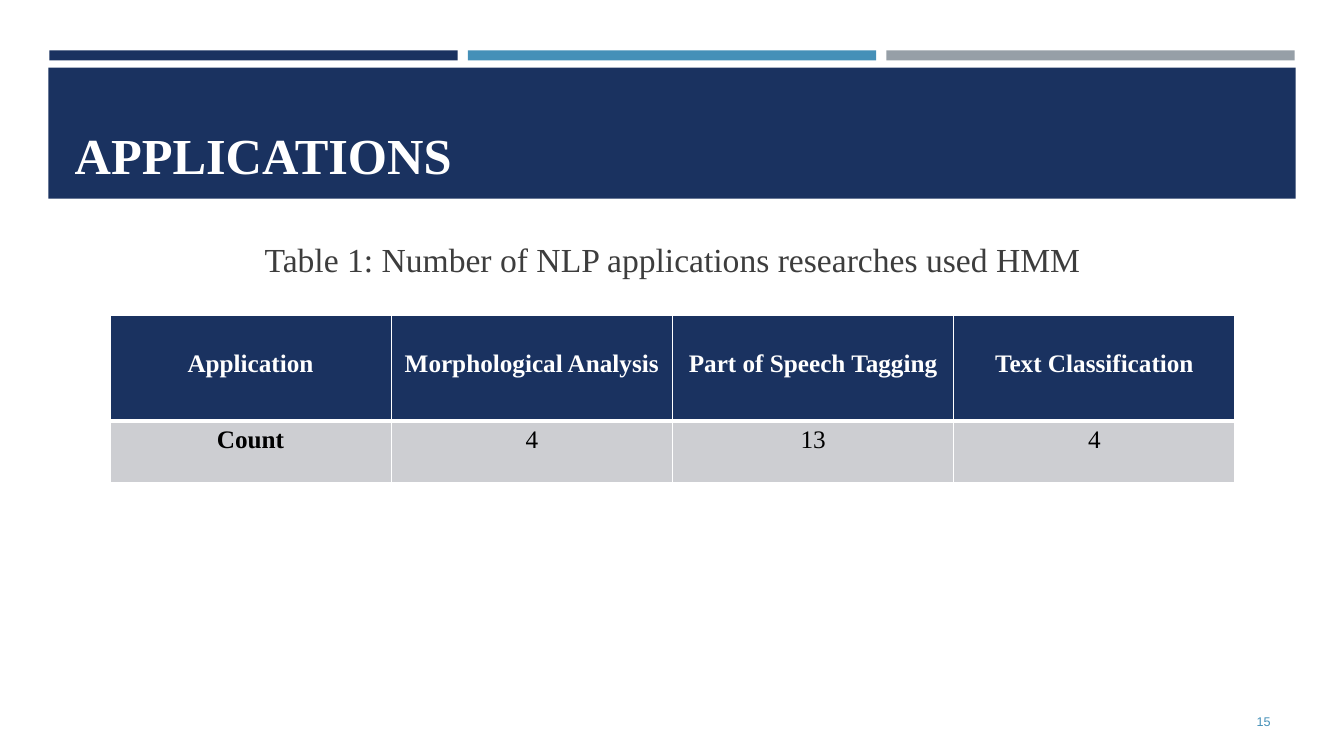
from lxml import etree
from pptx import Presentation
from pptx.dml.color import RGBColor
from pptx.enum.shapes import MSO_SHAPE
from pptx.enum.text import MSO_ANCHOR, PP_ALIGN
from pptx.oxml.ns import qn
from pptx.util import Inches, Pt

RECTANGLE = MSO_SHAPE.RECTANGLE
TOP, MIDDLE, BOTTOM = MSO_ANCHOR.TOP, MSO_ANCHOR.MIDDLE, MSO_ANCHOR.BOTTOM
LEFT, CENTER, RIGHT = PP_ALIGN.LEFT, PP_ALIGN.CENTER, PP_ALIGN.RIGHT
NAVY, BLUE, GREY, WHITE = "1A3260", "4590B8", "969FA7", "FFFFFF"
SERIF = "Times New Roman"
ROWS = [
    ["Application", "Morphological Analysis", "Part of Speech Tagging", "Text Classification"],
    ["Count", "4", "13", "4"],
]


def color(value):
    return RGBColor.from_string(value)


def add_bar(page, left, top, width, height, fill):
    bar = page.shapes.add_shape(RECTANGLE, Inches(left), Inches(top), Inches(width), Inches(height))
    bar.shadow.inherit = False
    bar.fill.solid()
    bar.fill.fore_color.rgb = color(fill)
    bar.line.fill.background()


def write(frame, text, ink, align=LEFT, **font):
    para = frame.paragraphs[0]
    para.alignment = align
    span = para.add_run()
    span.text = text
    span.font.color.rgb = color(ink)
    for name, value in font.items():
        setattr(span.font, name, value)
    return para


def add_label(page, left, top, width, height, anchor):
    box = page.shapes.add_textbox(Inches(left), Inches(top), Inches(width), Inches(height))
    box.text_frame.word_wrap = True
    box.text_frame.vertical_anchor = anchor
    return box.text_frame


def add_title(page, text):
    title = page.shapes.title
    title.left, title.top = Inches(0.64), Inches(0.77)
    title.width, title.height = Inches(12.06), Inches(1.11)
    title.text_frame.vertical_anchor = BOTTOM
    write(title.text_frame, text, WHITE, size=Pt(36), name=SERIF, bold=True)


def set_borders(cell, widths):
    properties = cell._tc.get_or_add_tcPr()
    for position, (side, width) in enumerate(widths.items()):
        line = etree.Element(qn(f"a:{side}"), w=str(Pt(width)))
        fill = etree.SubElement(line, qn("a:solidFill"))
        etree.SubElement(fill, qn("a:srgbClr"), val=WHITE)
        properties.insert(position, line)


def add_count_table(page):
    frame = page.shapes.add_table(2, 4, Inches(1.09), Inches(3.13), Inches(11.16), Inches(1.66))
    table = frame.table
    for row, height in zip(table.rows, (1.05, 0.61)):
        row.height = Inches(height)
    for row_index, texts in enumerate(ROWS):
        header = row_index == 0
        for column_index, text in enumerate(texts):
            cell = table.cell(row_index, column_index)
            cell.fill.solid()
            cell.fill.fore_color.rgb = color(NAVY if header else "CDCED2")
            cell.margin_top = Inches(0.34 if header else 0.05)
            write(cell.text_frame, text, WHITE if header else "000000", CENTER,
                  size=Pt(18), name=SERIF, bold=header or column_index == 0)
            set_borders(cell, {"lnL": 1, "lnR": 1, "lnT": 1 if header else 3,
                               "lnB": 3 if header else 1})


def main():
    deck = Presentation()
    deck.slide_width, deck.slide_height = Inches(13.33), Inches(7.5)
    page = deck.slides.add_slide(deck.slide_layouts[5])

    for index, fill in enumerate((NAVY, BLUE, GREY)):
        add_bar(page, 0.49 + 4.15 * index, 0.5, 4.05, 0.1, fill)
    add_bar(page, 0.48, 0.67, 12.37, 1.3, NAVY)
    title_element = page.shapes.title._element
    title_element.getparent().append(title_element)
    add_title(page, "APPLICATIONS")

    number = add_label(page, 11.55, 6.96, 1.15, 0.4, MIDDLE)
    write(number, "15", BLUE, RIGHT, size=Pt(9), name="Arial")
    caption = add_label(page, 0.64, 2.32, 12.06, 4.48, TOP)
    para = write(caption, "Table 1: Number of NLP applications researches used HMM",
                 "3D3D3D", CENTER, size=Pt(24), name=SERIF)
    para.space_before, para.space_after = Pt(3), Pt(6)
    add_count_table(page)

    deck.save("out.pptx")


if __name__ == "__main__":
    main()
